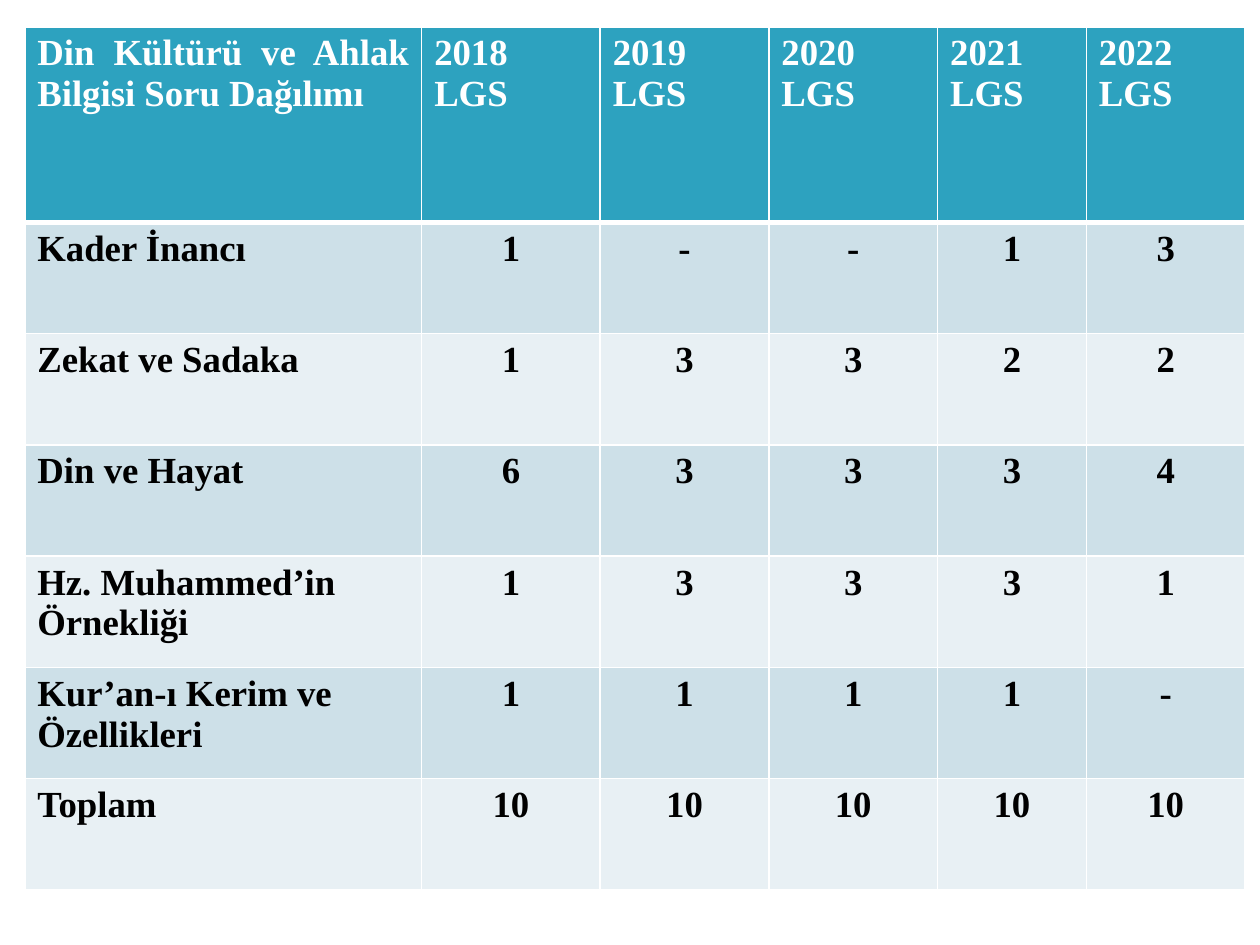
from lxml.etree import SubElement
from pptx import Presentation
from pptx.dml.color import RGBColor
from pptx.enum.text import PP_ALIGN as Align
from pptx.oxml.ns import qn
from pptx.util import Cm, Pt

WHITE = RGBColor(0xFF, 0xFF, 0xFF)
BLACK = RGBColor(0x00, 0x00, 0x00)
TEAL = RGBColor(0x2D, 0xA2, 0xBF)
BAND_DARK = RGBColor(0xCD, 0xE0, 0xE8)
BAND_LIGHT = RGBColor(0xE8, 0xF0, 0xF4)

FONT = "Times New Roman"
FONT_SIZE = Pt(21)
COLUMN_WIDTHS = [8, 3.6, 3.4, 3.4, 3, 3.2]
HEADER_HEIGHT = 3.94

HEADER = ["Din Kültürü ve Ahlak Bilgisi Soru Dağılımı"] + [
    f"{year} LGS" for year in range(2018, 2023)
]
TOPICS = [
    ["Kader İnancı", "1", "-", "-", "1", "3"],
    ["Zekat ve Sadaka", "1", "3", "3", "2", "2"],
    ["Din ve Hayat", "6", "3", "3", "3", "4"],
    ["Hz. Muhammed’in Örnekliği", "1", "3", "3", "3", "1"],
    ["Kur’an-ı Kerim ve Özellikleri", "1", "1", "1", "1", "-"],
    ["Toplam", "10", "10", "10", "10", "10"],
]


def set_borders(cell, top, bottom):
    """Draw white cell borders, with top and bottom widths in points."""
    properties = cell._tc.get_or_add_tcPr()
    for side, width in (("L", 1), ("R", 1), ("T", top), ("B", bottom)):
        line = SubElement(properties, qn(f"a:ln{side}"), w=str(Pt(width)))
        fill = SubElement(line, qn("a:solidFill"))
        SubElement(fill, qn("a:srgbClr"), val=str(WHITE))


def fill_cell(cell, text, row, column):
    """Write and style one cell according to its row and column."""
    is_header = row == 0
    set_borders(cell, 3 if row == 1 else 1, 3 if is_header else 1)
    cell.fill.solid()
    band = BAND_DARK if row % 2 else BAND_LIGHT
    cell.fill.fore_color.rgb = TEAL if is_header else band

    paragraph = cell.text_frame.paragraphs[0]
    if is_header:
        paragraph.alignment = Align.LEFT if column else Align.JUSTIFY
    else:
        paragraph.alignment = Align.CENTER if column else Align.LEFT
    run = paragraph.add_run()
    run.text = text
    run.font.name = FONT
    run.font.size = FONT_SIZE
    run.font.bold = True
    run.font.color.rgb = WHITE if is_header else BLACK


def add_question_table(slide, left, top, width, height):
    """Add the question distribution table inside the given box, in cm."""
    rows = [HEADER, *TOPICS]
    box = (Cm(left), Cm(top), Cm(width), Cm(height))
    table = slide.shapes.add_table(len(rows), len(HEADER), *box).table
    scale = width / sum(COLUMN_WIDTHS)
    for column, column_width in zip(table.columns, COLUMN_WIDTHS):
        column.width = Cm(column_width * scale)
    topic_height = (height - HEADER_HEIGHT) / len(TOPICS)
    for row_index, texts in enumerate(rows):
        table.rows[row_index].height = Cm(topic_height if row_index else HEADER_HEIGHT)
        for column_index, text in enumerate(texts):
            cell = table.cell(row_index, column_index)
            fill_cell(cell, text, row_index, column_index)


def main():
    """Build and save the presentation."""
    presentation = Presentation()
    presentation.slide_width = Cm(25.4)
    presentation.slide_height = Cm(19.05)
    slide = presentation.slides.add_slide(presentation.slide_layouts[6])
    add_question_table(slide, left=0.5, top=0.54, width=24.6, height=17.4)
    presentation.save("out.pptx")


if __name__ == "__main__":
    main()
